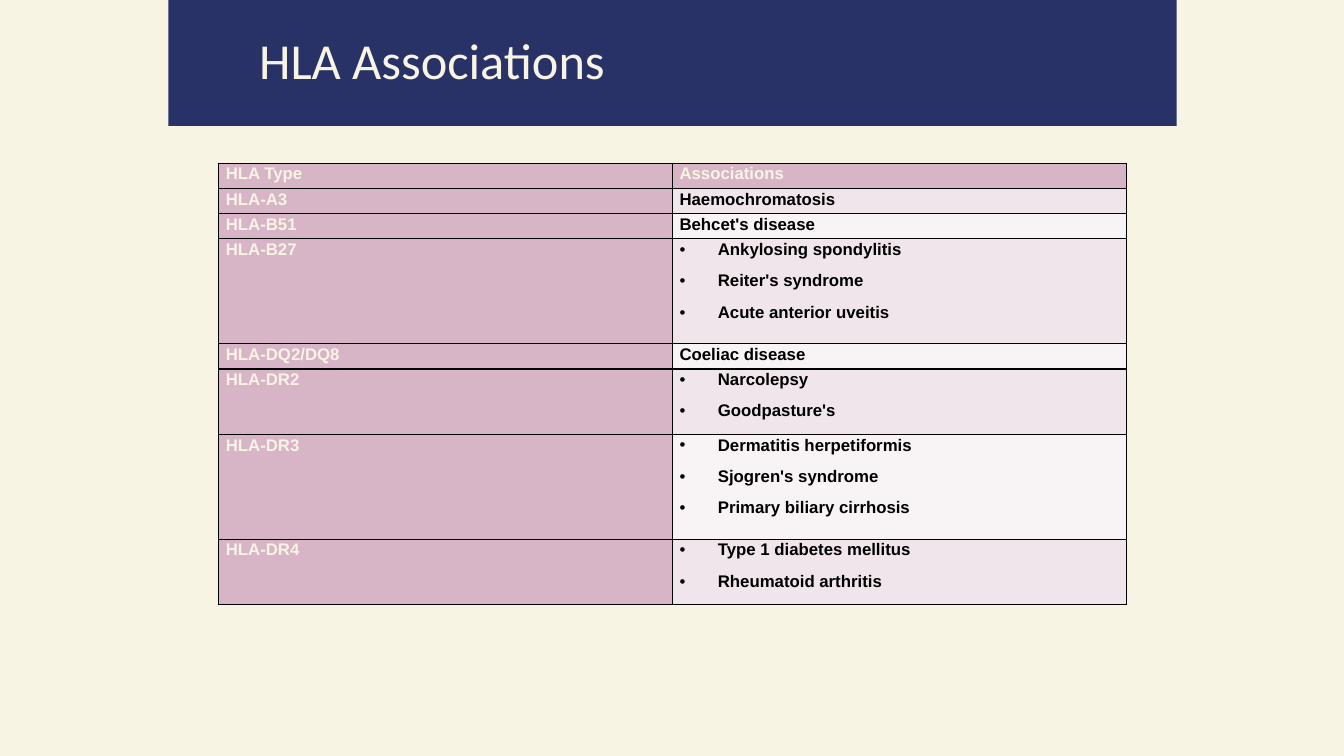
from lxml import etree
from pptx import Presentation
from pptx.dml.color import RGBColor
from pptx.enum.shapes import MSO_SHAPE
from pptx.enum.text import MSO_ANCHOR, PP_ALIGN
from pptx.oxml.ns import qn
from pptx.util import Inches, Pt

TITLE = "HLA Associations"
HEADERS = ("HLA Type", "Associations")
ASSOCIATIONS = [
    ("HLA-A3", ["Haemochromatosis"]),
    ("HLA-B51", ["Behcet's disease"]),
    ("HLA-B27", ["Ankylosing spondylitis", "Reiter's syndrome", "Acute anterior uveitis"]),
    ("HLA-DQ2/DQ8", ["Coeliac disease"]),
    ("HLA-DR2", ["Narcolepsy", "Goodpasture's"]),
    ("HLA-DR3", ["Dermatitis herpetiformis", "Sjogren's syndrome", "Primary biliary cirrhosis"]),
    ("HLA-DR4", ["Type 1 diabetes mellitus", "Rheumatoid arthritis"]),
]
ROW_HEIGHTS = {1: 0.25, 2: 0.65, 3: 1.04}  # inches, by number of associations

CREAM = RGBColor(0xF8, 0xF4, 0xE4)
NAVY = RGBColor(0x29, 0x32, 0x67)
BLACK = RGBColor(0, 0, 0)
ROSE = RGBColor(0xD7, 0xB5, 0xC6)
BANDS = (RGBColor(0xF0, 0xE5, 0xEA), RGBColor(0xF8, 0xF3, 0xF5))
JUSTIFY, LEFT = PP_ALIGN.JUSTIFY, PP_ALIGN.LEFT
TITLE_ONLY_LAYOUT = 5


def add_color(parent, color):
    etree.SubElement(parent, qn("a:srgbClr"), val=str(color))


def add_borders(cell):
    properties = cell._tc.get_or_add_tcPr()
    for side in ("lnL", "lnR", "lnT", "lnB"):
        line = etree.SubElement(properties, qn(f"a:{side}"), w=str(Pt(1)))
        add_color(etree.SubElement(line, qn("a:solidFill")), BLACK)


def add_bullet(paragraph):
    properties = paragraph._p.get_or_add_pPr()
    indent = Inches(0.38)
    properties.set("marL", str(indent))
    properties.set("indent", str(-indent))
    add_color(etree.SubElement(properties, qn("a:buClr")), BLACK)
    etree.SubElement(properties, qn("a:buFont"), typeface="Arial")
    etree.SubElement(properties, qn("a:buChar"), char="•")
    tabs = etree.SubElement(properties, qn("a:tabLst"))
    etree.SubElement(tabs, qn("a:tab"), pos=str(Inches(0.5)), algn="l")


def format_run(run, font_name, size, color, bold):
    run.font.name = font_name
    run.font.size = Pt(size)
    run.font.color.rgb = color
    run.font.bold = bold


def fill_cell(cell, lines, background, color, alignment, space_after):
    add_borders(cell)
    cell.fill.solid()
    cell.fill.fore_color.rgb = background
    cell.margin_left = cell.margin_right = Inches(0.07)
    cell.margin_top = cell.margin_bottom = 0
    cell.text_frame.text = "\n".join(lines)
    for paragraph in cell.text_frame.paragraphs:
        paragraph.alignment = alignment
        paragraph.line_spacing = 1.07
        paragraph.space_after = Pt(space_after)
        if len(lines) > 1:
            add_bullet(paragraph)
        format_run(paragraph.runs[0], "Arial", 12, color, True)


def add_title(slide):
    banner = slide.shapes.add_shape(
        MSO_SHAPE.RECTANGLE, Inches(1.67), 0, Inches(10), Inches(1.25))
    banner.shadow.inherit = False
    banner.fill.solid()
    banner.fill.fore_color.rgb = NAVY
    banner.line.fill.background()
    title = slide.shapes.title
    banner._element.addnext(title._element)  # bring the title in front of the banner
    title.left, title.top = Inches(2.47), Inches(0.23)
    title.width, title.height = Inches(8.33), Inches(0.71)
    title.text_frame.text = TITLE
    title.text_frame.vertical_anchor = MSO_ANCHOR.MIDDLE
    paragraph = title.text_frame.paragraphs[0]
    paragraph.alignment = LEFT
    format_run(paragraph.runs[0], "Calibri", 36, CREAM, False)


def add_association_table(slide):
    heights = [ROW_HEIGHTS[1]] + [ROW_HEIGHTS[len(names)] for _, names in ASSOCIATIONS]
    table = slide.shapes.add_table(
        len(heights), len(HEADERS), Inches(2.17), Inches(1.62),
        Inches(9), Inches(sum(heights))).table
    for row, height in zip(table.rows, heights):
        row.height = Inches(height)
    for column, header in enumerate(HEADERS):
        fill_cell(table.cell(0, column), [header], ROSE, CREAM, JUSTIFY, 0)
    for index, (hla_type, names) in enumerate(ASSOCIATIONS):
        fill_cell(table.cell(index + 1, 0), [hla_type], ROSE, CREAM, JUSTIFY, 0)
        fill_cell(table.cell(index + 1, 1), names, BANDS[index % 2], BLACK, LEFT, 8)


def main():
    presentation = Presentation()
    presentation.slide_width = Inches(13.33)
    presentation.slide_height = Inches(7.5)
    slide = presentation.slides.add_slide(presentation.slide_layouts[TITLE_ONLY_LAYOUT])
    slide.background.fill.solid()
    slide.background.fill.fore_color.rgb = CREAM
    add_title(slide)
    add_association_table(slide)
    presentation.save("out.pptx")


if __name__ == "__main__":
    main()
